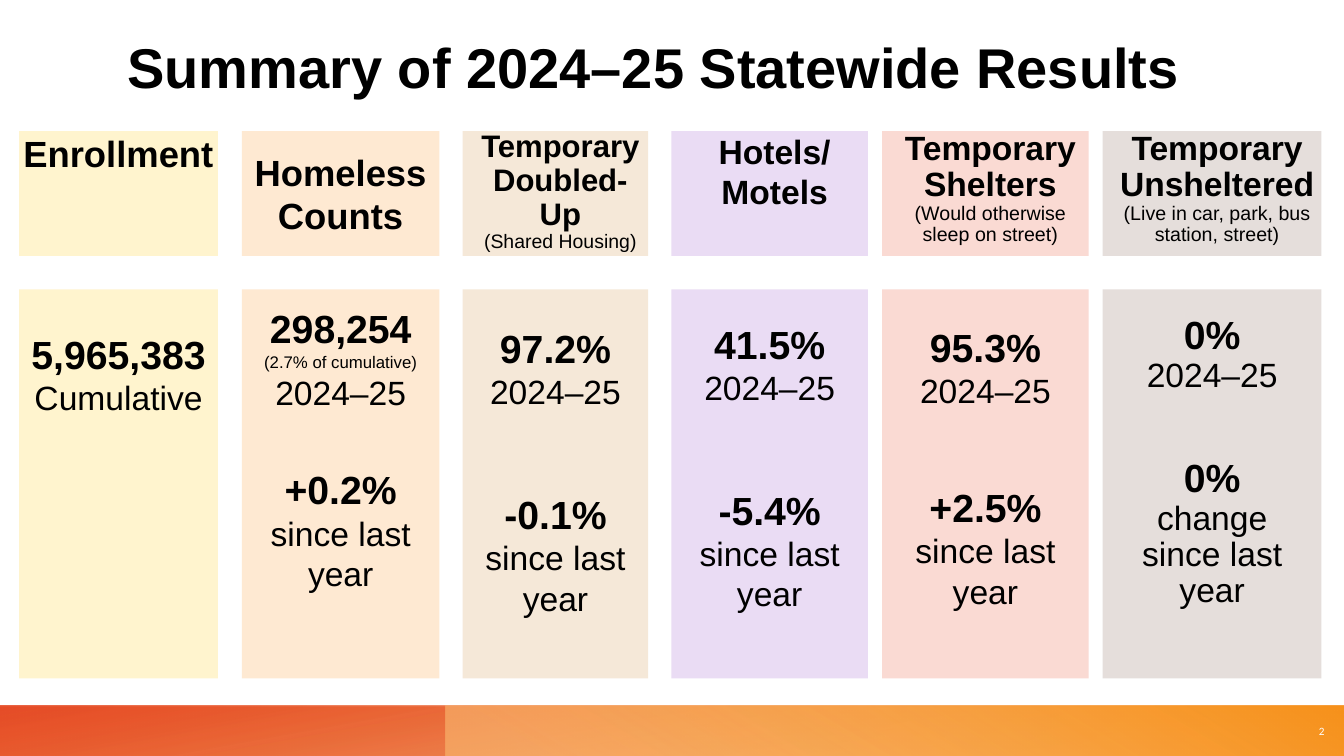
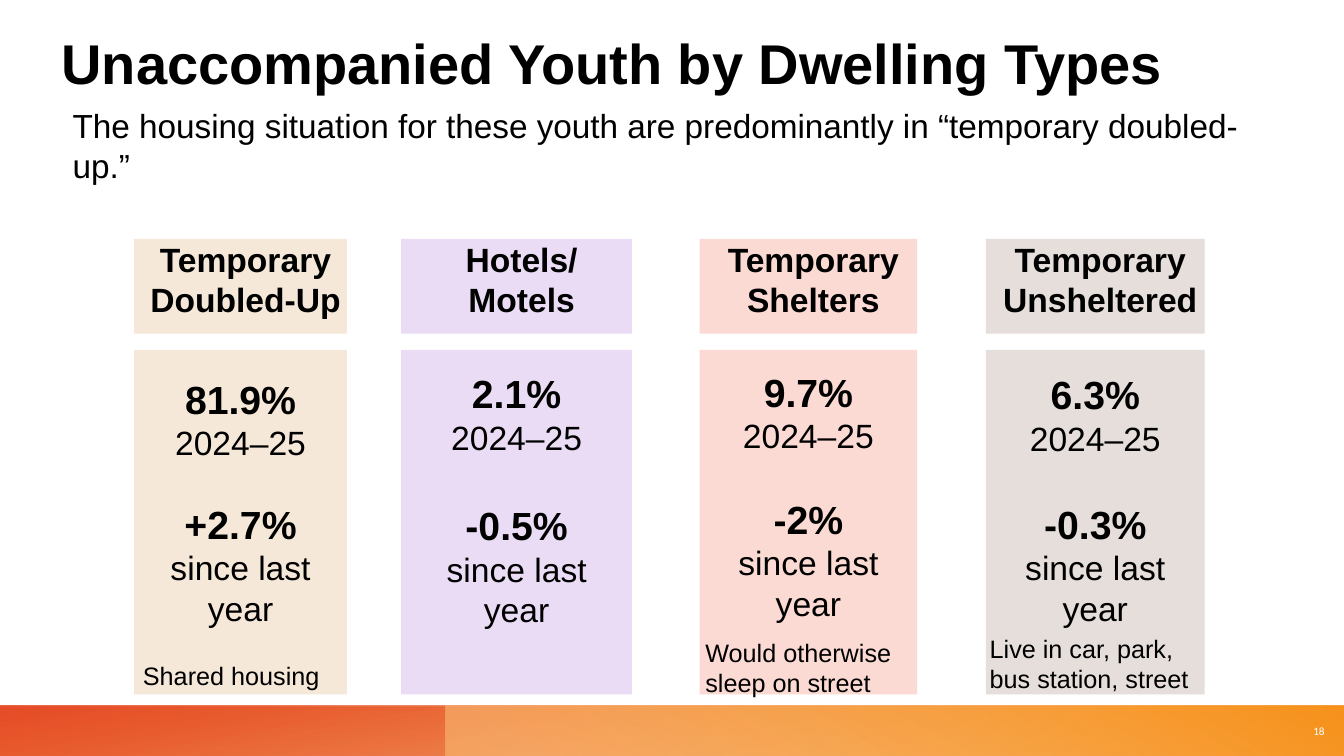
from dataclasses import dataclass, field
from typing import NamedTuple

from lxml import etree
from pptx import Presentation
from pptx.dml.color import RGBColor
from pptx.enum.shapes import MSO_SHAPE
from pptx.enum.text import MSO_ANCHOR, PP_ALIGN
from pptx.oxml.ns import qn
from pptx.util import Inches, Pt

RECTANGLE = MSO_SHAPE.RECTANGLE
TOP, MIDDLE = MSO_ANCHOR.TOP, MSO_ANCHOR.MIDDLE
LEFT, CENTER, RIGHT = PP_ALIGN.LEFT, PP_ALIGN.CENTER, PP_ALIGN.RIGHT

SLIDE_WIDTH, SLIDE_HEIGHT = Inches(13.333), Inches(7.5)


@dataclass(frozen=True)
class Theme:
    font: str = "Arial"
    number_font: str = "Calibri"
    ink: str = "000000"
    paper: str = "FFFFFF"
    enrollment: str = "FFF4CE"
    counts: str = "FEE9D2"
    doubled_up: str = "F5E8D8"
    hotels: str = "EADCF4"
    shelters: str = "FADAD3"
    unsheltered: str = "E5DEDB"
    title: float = 40
    value: float = 28
    lead_heading: float = 26
    heading: float = 24
    label: float = 24
    subtitle: float = 23.8
    note: float = 18
    small: float = 14
    tiny: float = 12
    number: float = 8


THEME = Theme()


class Box(NamedTuple):
    left: float
    top: float
    width: float
    height: float

    def emu(self) -> tuple[int, int, int, int]:
        return (int(SLIDE_WIDTH * self.left / 100), int(SLIDE_HEIGHT * self.top / 100),
                int(SLIDE_WIDTH * self.width / 100), int(SLIDE_HEIGHT * self.height / 100))


class Row(NamedTuple):
    top: float
    height: float


class Line(NamedTuple):
    text: str
    size: float
    bold: bool = False
    before: float = 0
    color: str = THEME.ink
    font: str = THEME.font


class Insets(NamedTuple):
    left: float = 0
    top: float = 0
    right: float = 0
    bottom: float = 0


NO_INSETS = Insets()
HEADING_INSETS = Insets(left=7.2)
NOTE_INSETS = Insets(7.2, 3.6, 7.2, 3.6)


class Stop(NamedTuple):
    position: float
    color: str
    opacity: int


class Band(NamedTuple):
    left: float
    stops: tuple[Stop, Stop]
    angle: float
    rotation: float


@dataclass(frozen=True)
class Card:
    left: float
    width: float
    color: str
    heading: list[Line]
    figures: list[Line]
    drop: float
    spacing: float = 1
    heading_spacing: float = 1
    heading_anchor: MSO_ANCHOR = TOP
    heading_insets: Insets = HEADING_INSETS


@dataclass(frozen=True)
class Page:
    title: str
    title_box: Box
    title_align: PP_ALIGN
    number: str
    heading_row: Row
    figure_row: Row
    cards: list[Card]
    texts: list[tuple[Box, Line, Insets]] = field(default_factory=list)


BANDS = (
    Band(0, (Stop(14, "EC7016", 28), Stop(100, "E64823", 85)), 100, 180),
    Band(33.15, (Stop(9, "FBBE77", 55), Stop(99, "F8931D", 100)), 240, 0),
)
BAND_TOPS = (93.33, 93.47)
BAND_HEIGHT = 6.67
NUMBER_BOX = Box(95.7, 93.47, 3.6, 6.53)


def heading(*texts: str, size: float = THEME.heading) -> list[Line]:
    return [Line(text, size, True) for text in texts]


def small(text: str, size: float = THEME.small) -> Line:
    return Line(text, size)


def share(value: str, change: str, gap: float,
          remark: tuple[Line, ...] = (),
          trend: tuple[str, ...] = ("since last year",)) -> list[Line]:
    return [Line(value, THEME.value, True), *remark,
            Line("2024–25", THEME.label),
            Line(change, THEME.value, True, gap),
            *(Line(text, THEME.label) for text in trend)]


PAGES = [
    Page(
        "Summary of 2024–25 Statewide Results", Box(4.3, 3.87, 88.58, 9.73), CENTER, "2",
        Row(17.33, 16.53), Row(38.27, 51.47),
        [
            Card(1.43, 14.78, THEME.enrollment,
                 heading("Enrollment", size=THEME.lead_heading),
                 [Line("5,965,383", THEME.value, True), Line("Cumulative", THEME.label)],
                 29, heading_insets=NO_INSETS),
            Card(18, 14.7, THEME.counts,
                 heading("Homeless Counts", size=THEME.lead_heading),
                 share("298,254", "+0.2%", 38, (small("(2.7% of cumulative)", THEME.tiny),)),
                 11, heading_anchor=MIDDLE, heading_insets=NO_INSETS),
            Card(34.43, 13.8, THEME.doubled_up,
                 heading("Temporary Doubled-Up", size=22.2)
                 + [small("(Shared Housing)", 13.9)],
                 share("97.2%", "-0.1%", 56), 25, heading_spacing=0.9),
            Card(49.95, 14.63, THEME.hotels, heading("Hotels/", "Motels"),
                 share("41.5%", "-5.4%", 56), 22),
            Card(65.63, 15.38, THEME.shelters,
                 heading("Temporary Shelters")
                 + [small("(Would otherwise sleep on street)")],
                 share("95.3%", "+2.5%", 52), 24, heading_spacing=0.9),
            Card(82.05, 16.28, THEME.unsheltered,
                 heading("Temporary Unsheltered")
                 + [small("(Live in car, park, bus station, street)")],
                 share("0%", "0%", 46, trend=("change", "since last year")),
                 19, spacing=0.9, heading_spacing=0.9),
        ],
    ),
    Page(
        "Unaccompanied Youth by Dwelling Types", Box(4.58, 0.53, 88.58, 15.47), LEFT, "18",
        Row(31.6, 12.53), Row(46.27, 45.6),
        [
            Card(9.98, 15.83, THEME.doubled_up, heading("Temporary", "Doubled-Up"),
                 share("81.9%", "+2.7%", 27), 18),
            Card(29.85, 17.18, THEME.hotels, heading("Hotels/", "Motels"),
                 share("2.1%", "-0.5%", 32), 14),
            Card(52.05, 16.2, THEME.shelters, heading("Temporary", "Shelters"),
                 share("9.7%", "-2%", 28.5), 13),
            Card(73.35, 16.28, THEME.unsheltered, heading("Temporary", "Unsheltered"),
                 share("6.3%", "-0.3%", 30), 15),
        ],
        [
            (Box(5.4, 13.87, 89.48, 11.07),
             Line("The housing situation for these youth are predominantly in "
                  "“temporary doubled-up.”", THEME.subtitle), NO_INSETS),
            (Box(9.9, 86.67, 15.45, 5.33),
             Line("Shared housing", THEME.note), NOTE_INSETS),
            (Box(51.75, 83.6, 16.5, 9.47),
             Line("Would otherwise sleep on street", THEME.note), NOTE_INSETS),
            (Box(72.9, 83.07, 17.55, 9.47),
             Line("Live in car, park, bus station, street", THEME.note), NOTE_INSETS),
        ],
    ),
]


def write(shape, lines: list[Line], align: PP_ALIGN, insets: Insets = NO_INSETS,
          anchor: MSO_ANCHOR = TOP, spacing: float = 1) -> None:
    frame = shape.text_frame
    frame.word_wrap = True
    frame.vertical_anchor = anchor
    frame.margin_left, frame.margin_top, frame.margin_right, frame.margin_bottom = map(Pt, insets)
    for index, line in enumerate(lines):
        paragraph = frame.add_paragraph() if index else frame.paragraphs[0]
        paragraph.alignment = align
        paragraph.line_spacing = spacing
        paragraph.space_before = Pt(line.before)
        run = paragraph.add_run()
        run.text = line.text
        run.font.name = line.font
        run.font.size = Pt(line.size)
        run.font.bold = line.bold
        run.font.color.rgb = RGBColor.from_string(line.color)


def add_text(slide, box: Box, line: Line, align: PP_ALIGN = LEFT,
             insets: Insets = NO_INSETS, anchor: MSO_ANCHOR = TOP) -> None:
    write(slide.shapes.add_textbox(*box.emu()), [line], align, insets, anchor)


def add_panel(slide, box: Box):
    panel = slide.shapes.add_shape(RECTANGLE, *box.emu())
    panel.shadow.inherit = False
    panel.line.fill.background()
    return panel


def add_tile(slide, box: Box, color: str):
    tile = add_panel(slide, box)
    tile.fill.solid()
    tile.fill.fore_color.rgb = RGBColor.from_string(color)
    return tile


def add_band(slide, band: Band, top: float) -> None:
    strip = add_panel(slide, Box(band.left, top, 100 - band.left, BAND_HEIGHT))
    strip.rotation = band.rotation
    properties = strip._element.spPr
    properties.find(qn("a:xfrm")).set("flipH", "1")
    strip.fill.gradient()
    strip.fill.gradient_angle = 360 - band.angle
    for target, stop in zip(strip.fill.gradient_stops, band.stops):
        target.position = stop.position / 100
        target.color.rgb = RGBColor.from_string(stop.color)
    for color, stop in zip(properties.iter(qn("a:srgbClr")), band.stops):
        etree.SubElement(color, qn("a:alpha")).set("val", str(stop.opacity * 1000))


def add_card(slide, card: Card, page: Page) -> None:
    top_tile, figure_tile = (
        add_tile(slide, Box(card.left, row.top, card.width, row.height), card.color)
        for row in (page.heading_row, page.figure_row))
    write(top_tile, card.heading, CENTER, card.heading_insets,
          card.heading_anchor, card.heading_spacing)
    write(figure_tile, card.figures, CENTER, Insets(7.2, card.drop, 7.2),
          spacing=card.spacing)


def add_page(deck, page: Page) -> None:
    slide = deck.slides.add_slide(deck.slide_layouts[6])
    for top in BAND_TOPS:
        for band in BANDS:
            add_band(slide, band, top)
    add_text(slide, page.title_box, Line(page.title, THEME.title, True),
             page.title_align, anchor=MIDDLE)
    add_text(slide, NUMBER_BOX,
             Line(page.number, THEME.number, color=THEME.paper, font=THEME.number_font),
             RIGHT, NOTE_INSETS, MIDDLE)
    for card in page.cards:
        add_card(slide, card, page)
    for box, line, insets in page.texts:
        add_text(slide, box, line, insets=insets)


def main() -> None:
    deck = Presentation()
    deck.slide_width, deck.slide_height = SLIDE_WIDTH, SLIDE_HEIGHT
    for page in PAGES:
        add_page(deck, page)
    deck.save("out.pptx")


if __name__ == "__main__":
    main()
